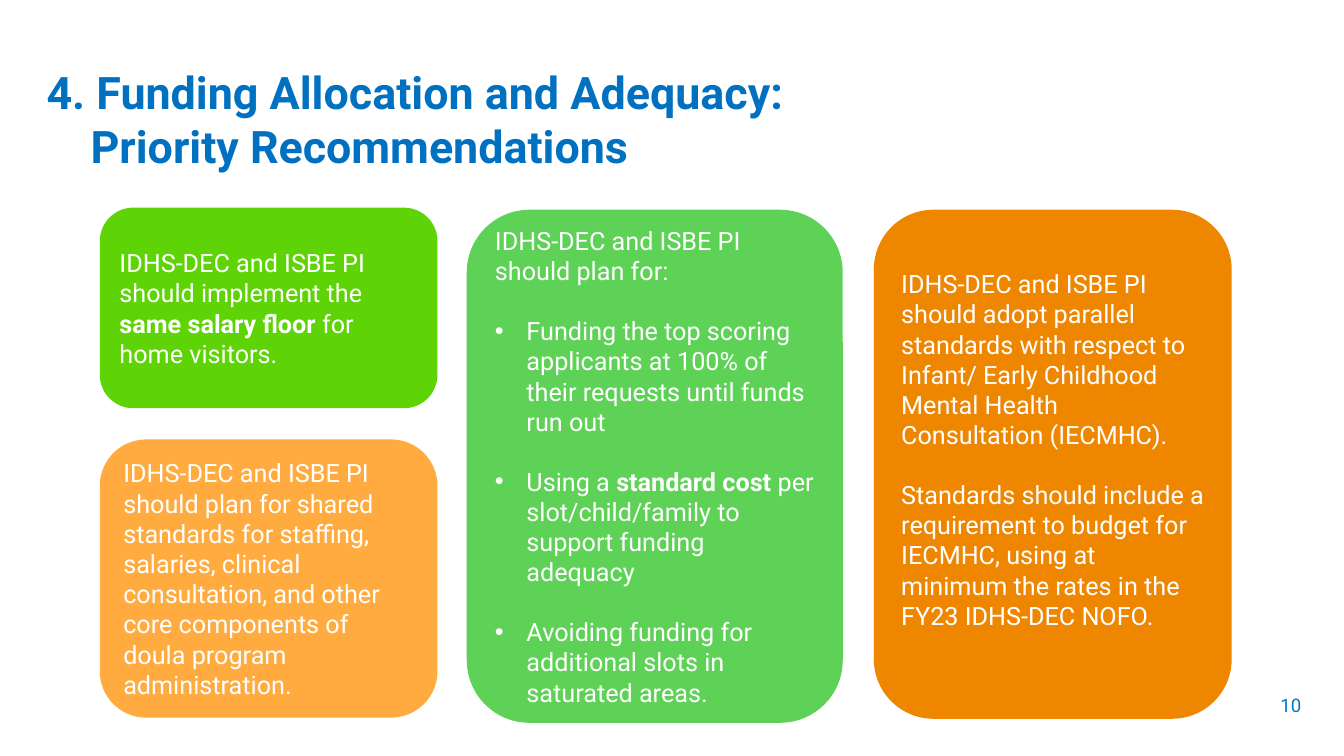
import pptx
import pptx.dml.color
import pptx.enum.shapes
import pptx.enum.text
import pptx.util
from lxml import etree

Pt = pptx.util.Pt
ALIGN = pptx.enum.text.PP_ALIGN
ANCHOR = pptx.enum.text.MSO_ANCHOR
ROUNDED = pptx.enum.shapes.MSO_SHAPE.ROUNDED_RECTANGLE

FONT = "Roboto"
COLORS = {
    "title": "0070C0",
    "number": "0079C1",
    "text": "FFFFFF",
    "salary": "5ED406",
    "doula": "FFAB40",
    "funding": "5ED257",
    "consultation": "EF8600",
}
LINE_GAP = 21.1  # one line of 18 pt text
INDENT = 22.5


def add_text(paragraph, text, size, color, bold=False):
    run = paragraph.add_run()
    run.text = text
    for name, value in {"name": FONT, "size": Pt(size), "bold": bold}.items():
        setattr(run.font, name, value)
    run.font.color.rgb = pptx.dml.color.RGBColor.from_string(COLORS[color])


def format_frame(frame, anchor, horizontal, top, bottom):
    settings = {
        "word_wrap": True,
        "auto_size": pptx.enum.text.MSO_AUTO_SIZE.NONE,
        "vertical_anchor": anchor,
        "margin_left": Pt(horizontal),
        "margin_right": Pt(horizontal),
        "margin_top": Pt(top),
        "margin_bottom": Pt(bottom),
    }
    for name, value in settings.items():
        setattr(frame, name, value)


presentation = pptx.Presentation()
presentation.slide_width = Pt(960)
presentation.slide_height = Pt(540)
slide = presentation.slides.add_slide(presentation.slide_layouts[5])

# Title, with its second line indented
title = slide.shapes.title
for name, value in {"left": 23.8, "top": 36.7, "width": 901.4, "height": 67.7}.items():
    setattr(title, name, Pt(value))
format_frame(title.text_frame, ANCHOR.TOP, 9.4, 9.4, 9.4)
title_lines = [("4. Funding Allocation and Adequacy:", 0), ("Priority Recommendations", 31.5)]
for index, (line, indent) in enumerate(title_lines):
    paragraph = title.text_frame.paragraphs[0] if index == 0 else title.text_frame.add_paragraph()
    paragraph.alignment = ALIGN.LEFT
    paragraph._p.get_or_add_pPr().set("marL", str(Pt(indent)))
    add_text(paragraph, line, 32, "title", True)

# Slide number
number = slide.shapes.add_textbox(Pt(491.8), Pt(481.7), Pt(447.1), Pt(41))
format_frame(number.text_frame, ANCHOR.MIDDLE, 9.4, 9.4, 9.4)
paragraph = number.text_frame.paragraphs[0]
paragraph.alignment = ALIGN.RIGHT
paragraph.line_spacing = 1.15
add_text(paragraph, "10", 13.3, "number")

# Cards: colour, place, bottom margin, paragraphs as (bulleted, runs); every second run is bold
cards = [
    ("salary", (71.3, 148.3, 241.2, 143.3), 3.6, [
        (False, ["IDHS-DEC and ISBE PI should implement the ", "same salary floor ",
                 "for home visitors."]),
    ]),
    ("consultation", (624.2, 149.8, 255.6, 363.6), 3.6 + LINE_GAP, [
        (False, ["IDHS-DEC and ISBE PI should adopt parallel standards with respect to "
                 "Infant/ Early Childhood Mental Health Consultation (IECMHC)."]),
        (False, ["Standards should include a requirement to budget for IECMHC, using at "
                 "minimum the rates in the FY23 IDHS-DEC NOFO."]),
    ]),
    ("doula", (71.3, 313.9, 241.2, 198.7), 3.6, [
        (False, ["IDHS-DEC and ISBE PI should plan for shared standards for staffing, salaries, "
                 "clinical consultation, and other core components of doula program "
                 "administration."]),
    ]),
    ("funding", (333.4, 149.8, 268.6, 366.5), 3.6, [
        (False, ["IDHS-DEC and ISBE PI should plan for:"]),
        (True, ["Funding the top scoring applicants at 100% of their requests until funds "
                "run out"]),
        (True, ["Using a ", "standard cost ", "per slot/child/family to support funding adequacy"]),
        (True, ["Avoiding funding for additional slots in saturated areas."]),
    ]),
]
for color, place, bottom, paragraphs in cards:
    card = slide.shapes.add_shape(ROUNDED, *[Pt(length) for length in place])
    card.shadow.inherit = False
    card.fill.solid()
    card.fill.fore_color.rgb = pptx.dml.color.RGBColor.from_string(COLORS[color])
    card.line.fill.background()
    format_frame(card.text_frame, ANCHOR.MIDDLE, 7.2, 3.6, bottom)
    for index, (bulleted, runs) in enumerate(paragraphs):
        paragraph = card.text_frame.paragraphs[0] if index == 0 else card.text_frame.add_paragraph()
        paragraph.alignment = ALIGN.LEFT
        if index > 0:
            paragraph.space_before = Pt(LINE_GAP)
        if bulleted:
            properties = paragraph._p.get_or_add_pPr()
            properties.set("marL", str(Pt(INDENT)))
            properties.set("indent", str(-Pt(INDENT)))
            for tag, name, value in [("buFont", "typeface", "Arial"), ("buChar", "char", "•")]:
                etree.SubElement(properties, pptx.oxml.ns.qn("a:" + tag)).set(name, value)
        for position, text in enumerate(runs):
            add_text(paragraph, text, 18, "text", position % 2 == 1)

presentation.save("out.pptx")
